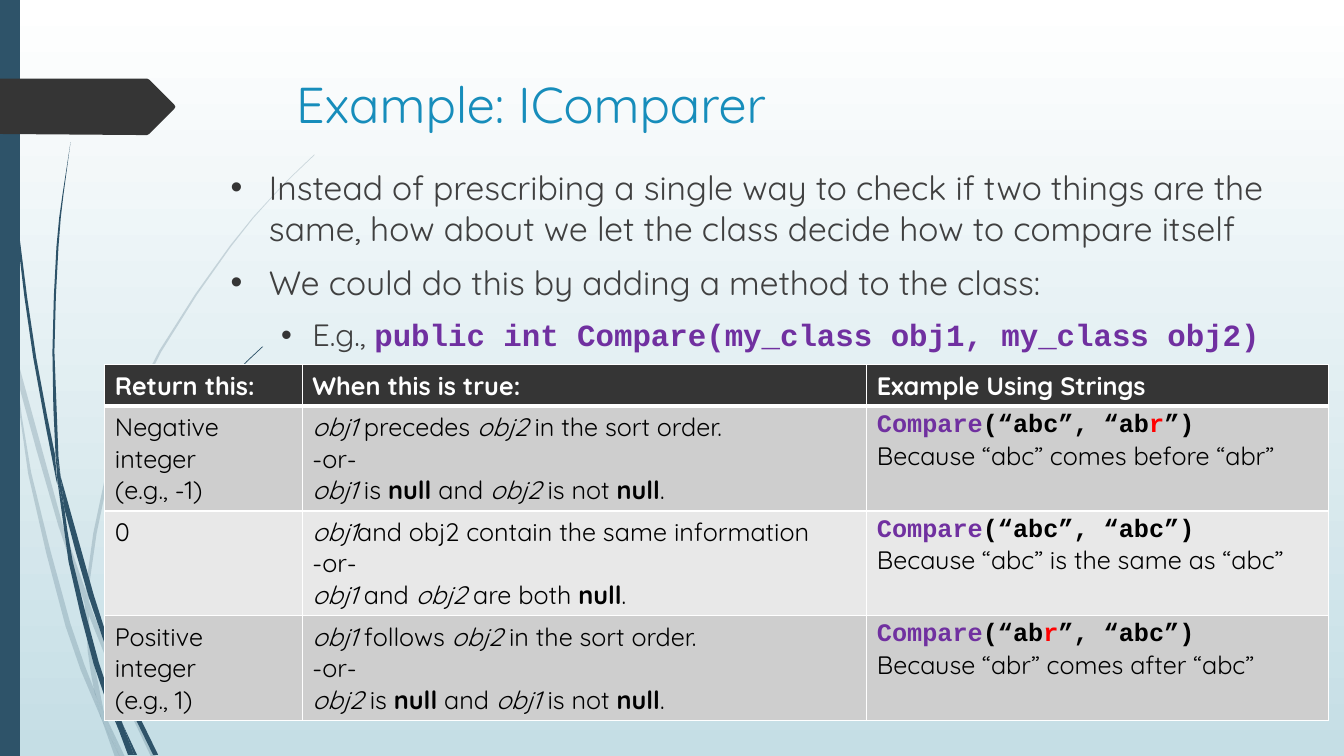
from typing import NamedTuple, Optional

from lxml import etree
from pptx import Presentation
from pptx import util as u
from pptx.dml.color import RGBColor
from pptx.oxml.ns import qn

COLORS = {
    "sky": "C5DEE5", "navy": "2E5369", "dark": "353535", "title": "178DBB",
    "body": "404040", "code": "7030A0", "changed": "FF0000", "black": "000000",
    "white": "FFFFFF", "band": "CECECE", "light": "E8E8E8",
}
SANS, MONO = "Quicksand", "Courier New"
Point = tuple[float, float]


class Strand(NamedTuple):
    """A blade of grass, outlined by two smooth edges that meet in cusps."""
    there: list[Point]
    back: list[Point]


class Run(NamedTuple):
    text: str
    bold: Optional[bool] = None
    italic: Optional[bool] = None
    font: Optional[str] = None
    color: Optional[str] = None
    size: Optional[float] = None


class Bullet(NamedTuple):
    runs: list[Run]
    level: int = 0
    margin: float = 0.38
    hanging: float = 0.38


# Grass, group by group
PALE_GRASS = [
    Strand([(0, 2.82), (0.09, 3.22), (0.11, 3.5)], [(0.1, 3.44), (0, 2.99)]),
    Strand([(0.14, 3.45), (0.17, 3.76), (0.58, 5.22), (0.84, 5.99)],
           [(0.85, 5.86), (0.62, 5.2), (0.14, 3.45)]),
    Strand([(0.88, 5.96), (0.88, 6.1), (1.23, 6.94), (1.5, 7.51)],
           [(1.55, 7.51), (1.27, 6.92), (0.92, 6.07), (0.88, 5.96)]),
    Strand([(1.05, 7.11), (1.19, 7.51)], [(1.24, 7.51), (1.05, 7.11)]),
    Strand([(0.11, 3.5), (0.28, 4.7), (0.65, 6.21), (0.92, 6.93), (1.01, 7.14)],
           [(0.99, 7.07), (0.93, 6.83), (0.7, 6.19), (0.31, 4.69), (0.17, 3.76), (0.11, 3.5)]),
    Strand([(0.84, 5.99), (0.87, 6.46), (0.93, 6.83), (0.96, 6.92), (1.05, 7.11)],
           [(1.03, 7.06), (0.91, 6.46), (0.88, 6.1), (0.84, 5.99)]),
    Strand([(0.88, 5.96), (0.88, 5.84), (1.1, 4.62), (1.6, 3.49), (2.29, 2.45), (2.68, 1.98),
            (2.9, 1.75), (3.12, 1.54)],
           [(3.12, 1.53), (2.89, 1.75), (2.68, 1.97), (2.28, 2.44), (1.58, 3.48), (1.07, 4.61),
            (0.85, 5.84), (0.88, 5.96)]),
    Strand([(1.01, 7.14), (1.14, 7.51)], [(1.19, 7.51), (1.01, 7.14)]),
    Strand([(0.85, 5.86), (0.84, 5.99), (0.88, 6.1)], [(0.88, 5.96), (0.85, 5.86)]),
    Strand([(0.93, 6.83), (0.99, 7.07), (1.01, 7.14), (1.19, 7.51)],
           [(1.05, 7.11), (0.96, 6.92), (0.93, 6.83)]),
]
DARK_GRASS = [
    Strand([(0.03, 0), (0.04, 0.48), (0.07, 1.1), (0.17, 2.33), (0.33, 3.55), (0.56, 4.77),
            (0.57, 4.81)],
           [(0.55, 4.57), (0.55, 4.53), (0.36, 3.55), (0.19, 2.32), (0.08, 1.09),
            (0.05, 0.48), (0.04, 0)]),
    Strand([(0.6, 4.72), (0.64, 5.05), (0.88, 5.92), (1.06, 6.45)],
           [(1.06, 6.31), (0.93, 5.9), (0.6, 4.72)]),
    Strand([(1.1, 6.41), (1.11, 6.56), (1.32, 7.08), (1.52, 7.49)],
           [(1.57, 7.49), (1.36, 7.06), (1.13, 6.49), (1.1, 6.41)]),
    Strand([(0.57, 4.77), (0.68, 5.57), (0.93, 6.59), (1.11, 7.08), (1.17, 7.22)],
           [(1.16, 7.17), (1.1, 6.91), (0.98, 6.57), (0.72, 5.56), (0.64, 5.05), (0.57, 4.77)]),
    Strand([(0.7, 1.41), (0.62, 1.93), (0.56, 2.45), (0.52, 3.49), (0.55, 4.49), (0.6, 4.72)],
           [(0.58, 4.53), (0.54, 3.49), (0.58, 2.45), (0.63, 1.93), (0.7, 1.41)]),
    Strand([(1.22, 7.19), (1.33, 7.49)], [(1.36, 7.49), (1.22, 7.19)]),
    Strand([(0.55, 4.49), (0.57, 4.77), (0.64, 5.05)], [(0.6, 4.72), (0.55, 4.49)]),
    Strand([(1.1, 6.41), (1.11, 6.33), (1.25, 5.52), (1.58, 4.76), (2.05, 4.06), (2.31, 3.74),
            (2.45, 3.59), (2.61, 3.44)],
           [(2.6, 3.44), (2.45, 3.58), (2.31, 3.73), (2.04, 4.05), (1.56, 4.74), (1.22, 5.51),
            (1.06, 6.31), (1.1, 6.41)]),
    Strand([(1.17, 7.22), (1.27, 7.49)], [(1.31, 7.49), (1.17, 7.22)]),
    Strand([(1.06, 6.45), (1.1, 6.91), (1.16, 7.06), (1.22, 7.19)],
           [(1.21, 7.16), (1.11, 6.56), (1.06, 6.45)]),
    Strand([(1.06, 6.31), (1.06, 6.45), (1.11, 6.56)], [(1.1, 6.41), (1.06, 6.31)]),
    Strand([(1.1, 6.91), (1.16, 7.17), (1.17, 7.22), (1.3, 7.49)],
           [(1.33, 7.49), (1.22, 7.19), (1.16, 7.06), (1.1, 6.91)]),
]
SIDE_BAR = [(0, 0), (0.2, 0), (0.2, 7.5), (0, 7.5)]
ARROW = [(0, 0.78), (1.46, 0.78), (1.48, 0.79), (1.73, 1.04), (1.74, 1.06), (1.73, 1.08),
         (1.48, 1.33), (1.46, 1.34), (1.36, 1.34), (0, 1.33)]

# Wording
OBJ1, OBJ2 = Run("obj1", italic=True), Run("obj2", italic=True)
NULL, OR = Run("null", bold=True), [Run("-or-")]
IN_ORDER = Run(" in the sort order.")


def code(value: str, color: str = "black") -> Run:
    return Run(value, bold=True, font=MONO, color=color)


COMPARE, CHANGED = code("Compare", "code"), code("r", "changed")
BULLETS = [
    Bullet([Run("Instead of prescribing a single way to check if two things are the same, "
                "how about we let the class decide how to compare itself")]),
    Bullet([Run("We could do this by adding a method to the class:")]),
    Bullet([Run("E.g., ", size=22),
            code("public int Compare(my_class obj1, my_class obj2)", "code")._replace(size=22)],
           level=1, margin=0.81, hanging=0.31),
]
HEADINGS = ["Return this:", "When this is true:", "Example Using Strings"]
ROWS = [
    [[[Run(heading)]] for heading in HEADINGS],
    [[[Run("Negative integer")], [Run("(e.g., -1)")]],
     [[OBJ1, Run(" precedes "), OBJ2, IN_ORDER], OR,
      [OBJ1, Run(" is "), NULL, Run(" and "), OBJ2, Run(" is not "), NULL, Run(".")]],
     [[COMPARE, code("(“abc”, “ab"), CHANGED, code("”)")],
      [Run("Because “abc” comes before “abr”")]]],
    [[[Run("0")]],
     [[OBJ1, Run("and obj2 contain the same information")], OR,
      [OBJ1, Run(" and "), OBJ2, Run(" are both "), NULL, Run(".")]],
     [[COMPARE, code("(“abc”, “abc”)")], [Run("Because “abc” is the same as “abc”")]]],
    [[[Run("Positive\ninteger")], [Run("(e.g., 1)")]],
     [[OBJ1, Run(" follows "), OBJ2, IN_ORDER], OR,
      [OBJ2, Run(" is "), NULL, Run(" and "), OBJ1, Run(" is not "), NULL, Run(".")]],
     [[COMPARE, code("(“ab"), CHANGED, code("”, “abc”)")],
      [Run("Because “abr” comes after “abc”")]]],
]


def rgb(name: str) -> RGBColor:
    return RGBColor.from_string(COLORS[name])


def smooth(edge: list[Point]) -> list[Point]:
    """Add the Catmull-Rom midpoint between the inner points of an edge."""
    curve = edge[:2]
    for a, b, c, d in zip(edge, edge[1:], edge[2:], edge[3:]):
        curve += [tuple((9 * (q + r) - p - s) / 16 for p, q, r, s in zip(a, b, c, d)), c]
    return curve + edge[max(2, len(edge) - 1):]


def draw_outline(slide, points: list[Point], color: str, opacity: int = 100) -> None:
    corners = [(u.Inches(x), u.Inches(y)) for x, y in points]
    builder = slide.shapes.build_freeform(*corners[0])
    builder.add_line_segments(corners[1:])
    shape = builder.convert_to_shape()
    shape.shadow.inherit = False
    shape.line.fill.background()
    shape.fill.solid()
    shape.fill.fore_color.rgb = rgb(color)
    if opacity < 100:
        fill_color = shape.fill._xPr.find(".//" + qn("a:srgbClr"))
        etree.SubElement(fill_color, qn("a:alpha"), val=str(opacity * 1000))


def write(paragraph, runs: list[Run], size: float, color: str, bold: bool = False) -> None:
    font = paragraph.font
    font.name, font.size, font.bold, font.color.rgb = SANS, u.Pt(size), bold, rgb(color)
    for item in runs:
        for index, line in enumerate(item.text.split("\n")):
            if index:
                paragraph.add_line_break()
            run = paragraph.add_run()
            run.text = line
            run.font.bold, run.font.italic, run.font.name = item.bold, item.italic, item.font
            if item.size:
                run.font.size = u.Pt(item.size)
            if item.color:
                run.font.color.rgb = rgb(item.color)


def add_text_frame(slide, left: float, top: float, width: float, height: float):
    box = slide.shapes.add_textbox(*map(u.Inches, (left, top, width, height)))
    box.text_frame.word_wrap = True
    return box.text_frame


def add_bullet(paragraph, bullet: Bullet) -> None:
    paragraph.level, paragraph.space_before = bullet.level, u.Pt(10)
    properties = paragraph._p.get_or_add_pPr()
    properties.set("marL", str(u.Inches(bullet.margin)))
    properties.set("indent", str(-u.Inches(bullet.hanging)))
    bullet_color = etree.SubElement(properties, qn("a:buClr"))
    etree.SubElement(bullet_color, qn("a:srgbClr"), val=COLORS["dark"])
    etree.SubElement(properties, qn("a:buFont"), typeface="Arial")
    etree.SubElement(properties, qn("a:buChar"), char="•")
    write(paragraph, bullet.runs, 24, "body")


def style_cell(cell, fill: str, top: float, bottom: float) -> None:
    properties = cell._tc.get_or_add_tcPr()
    for side, points in (("L", 1), ("R", 1), ("T", top), ("B", bottom)):
        line = etree.SubElement(properties, qn(f"a:ln{side}"), w=str(u.Pt(points)))
        solid = etree.SubElement(line, qn("a:solidFill"))
        etree.SubElement(solid, qn("a:srgbClr"), val=COLORS["white"])
    cell.fill.solid()
    cell.fill.fore_color.rgb = rgb(fill)


def add_comparison_table(slide) -> None:
    widths, heights = [1.96, 5.6, 4.58], [0.41, 1.04, 1.04, 1.04]
    frame = slide.shapes.add_table(len(heights), len(widths), u.Inches(1.04), u.Inches(3.62),
                                   u.Inches(sum(widths)), u.Inches(sum(heights)))
    table = frame.table
    for column, width in zip(table.columns, widths):
        column.width = u.Inches(width)
    for index, (row, height, contents) in enumerate(zip(table.rows, heights, ROWS)):
        row.height = u.Inches(height)
        heading = index == 0
        fill = "dark" if heading else ("light", "band")[index % 2]
        for cell, paragraphs in zip(row.cells, contents):
            style_cell(cell, fill, 3 if index == 1 else 1, 3 if heading else 1)
            for number, runs in enumerate(paragraphs):
                target = cell.text_frame
                paragraph = target.add_paragraph() if number else target.paragraphs[0]
                write(paragraph, runs, 18, "white" if heading else "black", heading)


def main() -> None:
    presentation = Presentation()
    presentation.slide_width, presentation.slide_height = u.Inches(40 / 3), u.Inches(7.5)
    slide = presentation.slides.add_slide(presentation.slide_layouts[6])

    # Background and decoration
    background = slide.background.fill
    background.gradient()
    background.gradient_angle = 270
    for stop, color in zip(background.gradient_stops, ("white", "sky")):
        stop.color.rgb = rgb(color)
    for grass, opacity in ((PALE_GRASS, 20), (DARK_GRASS, 100)):
        for strand in grass:
            draw_outline(slide, smooth(strand.there) + smooth(strand.back), "navy", opacity)
    draw_outline(slide, SIDE_BAR, "navy")
    draw_outline(slide, ARROW, "dark")

    # Title, bullets and table
    title = add_text_frame(slide, 2.84, 0.68, 9.75, 1.4)
    write(title.paragraphs[0], [Run("Example: IComparer")], 36, "title")
    body = add_text_frame(slide, 2.19, 1.61, 10.98, 5.44)
    for index, bullet in enumerate(BULLETS):
        add_bullet(body.add_paragraph() if index else body.paragraphs[0], bullet)
    add_comparison_table(slide)
    presentation.save("out.pptx")


if __name__ == "__main__":
    main()
